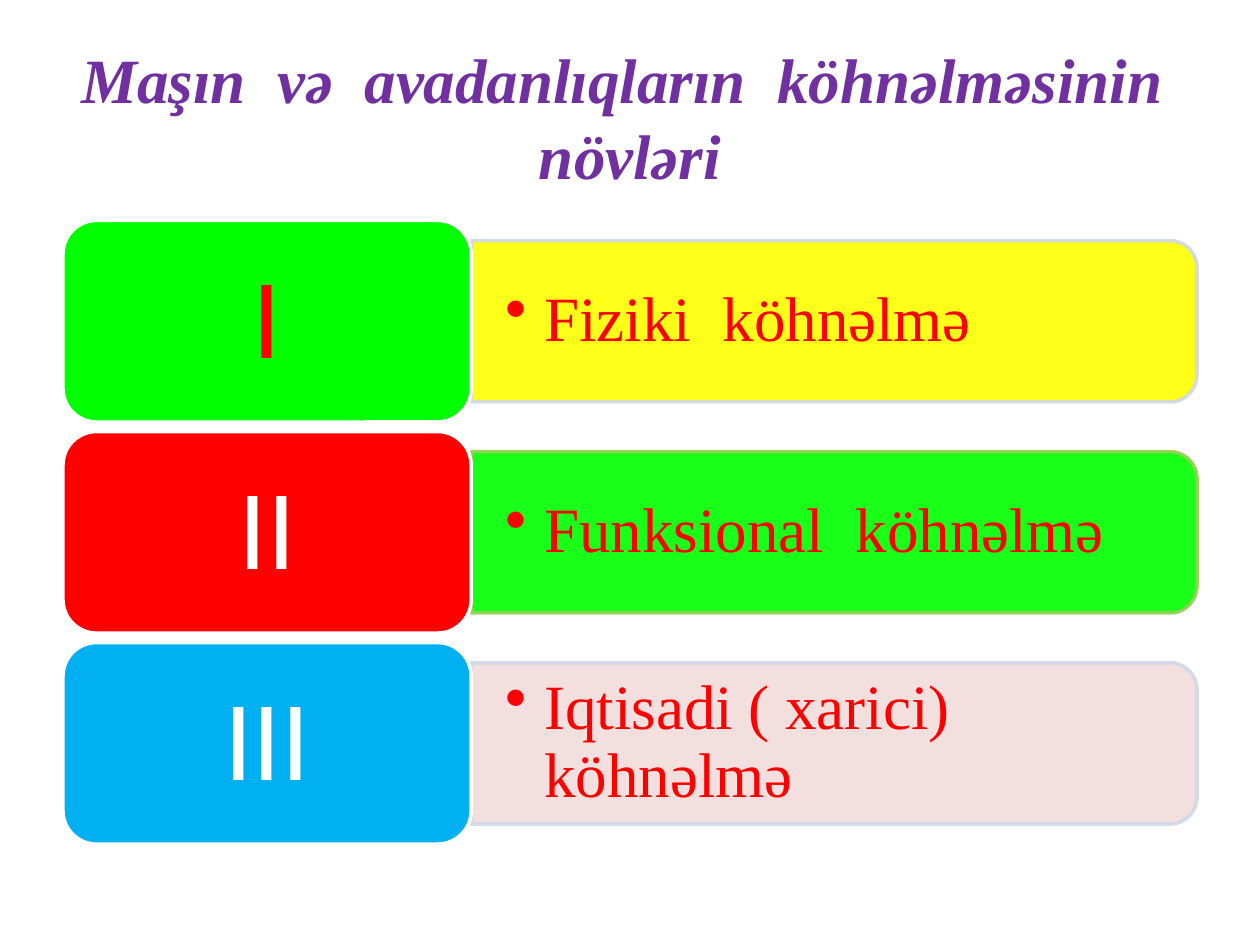
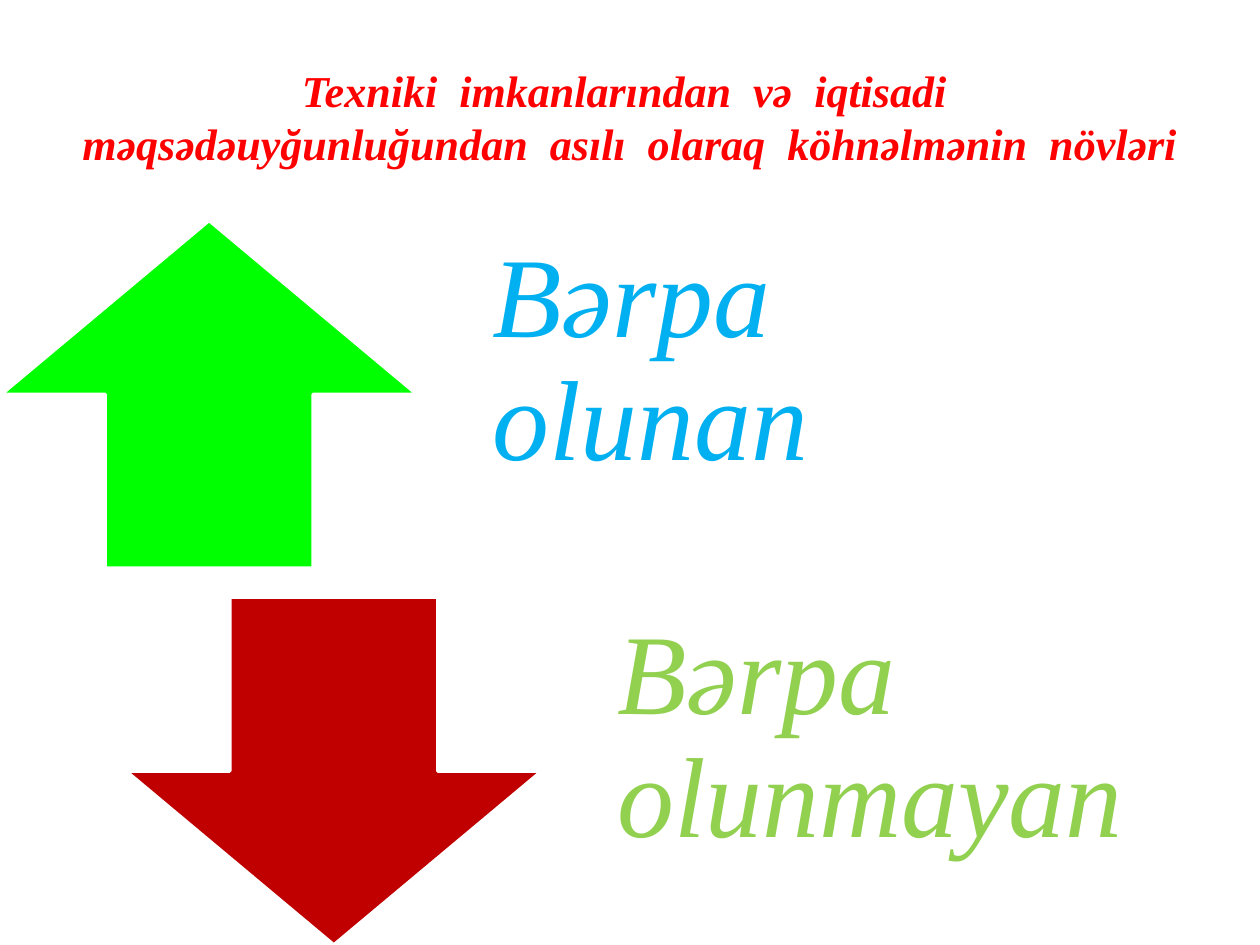
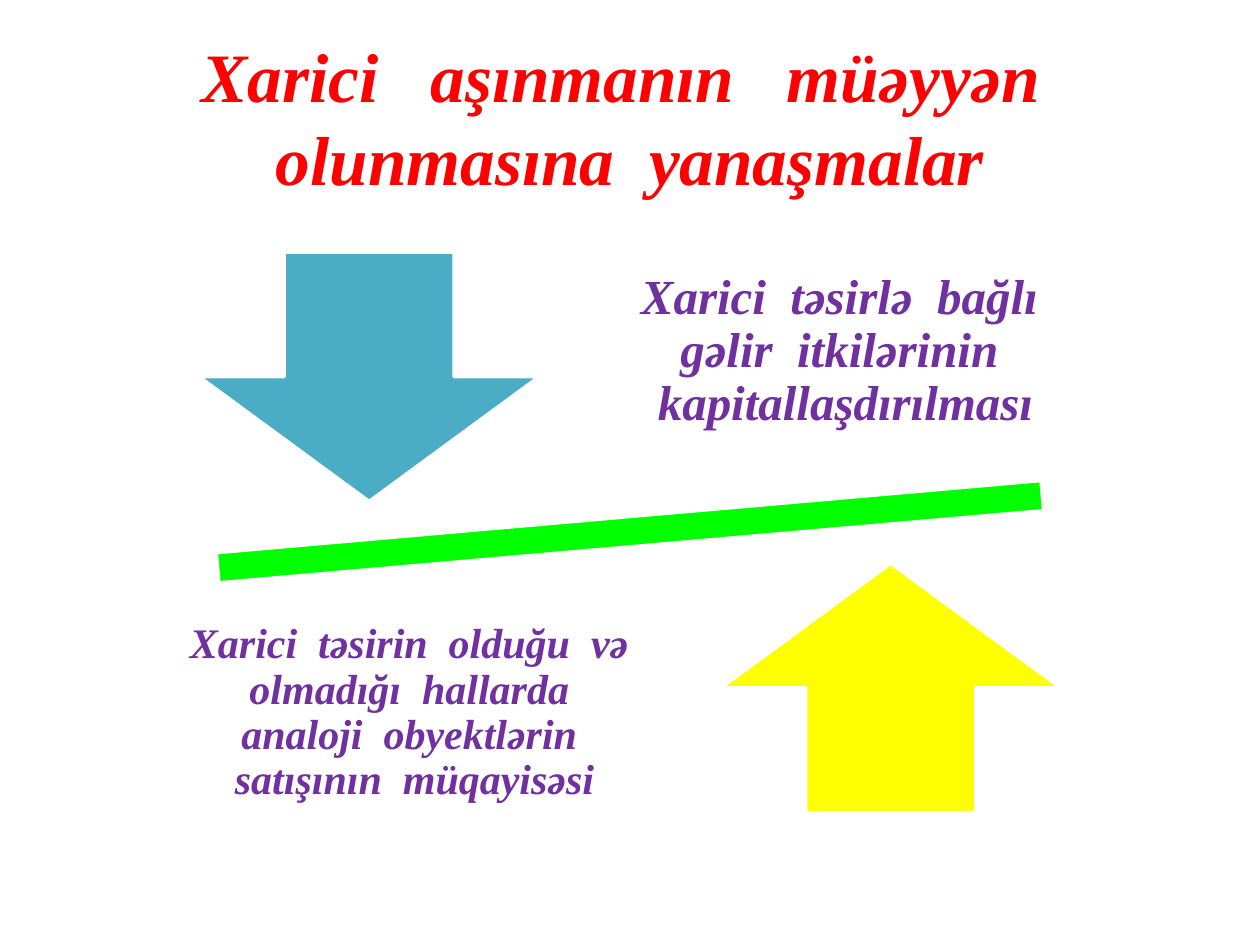
"""Builds three slides on the wear of machinery and its types."""
from lxml import etree
from pptx import Presentation
from pptx.dml.color import RGBColor
from pptx.enum.shapes import MSO_SHAPE
from pptx.enum.text import MSO_ANCHOR, PP_ALIGN
from pptx.oxml.ns import qn
from pptx.util import Inches, Pt

ROUNDED = MSO_SHAPE.ROUNDED_RECTANGLE
TAB = MSO_SHAPE.ROUND_2_SAME_RECTANGLE
UP, DOWN, MINUS = MSO_SHAPE.UP_ARROW, MSO_SHAPE.DOWN_ARROW, MSO_SHAPE.MATH_MINUS
LEFT, CENTER = PP_ALIGN.LEFT, PP_ALIGN.CENTER

SERIF, SANS = "Times New Roman", "Calibri"
WHITE, RED, GREEN, YELLOW = "FFFFFF", "FF0000", "00FF00", "FFFF00"
PURPLE, SKY, LIME, MAROON = "7030A0", "00B0F0", "92D050", "C00000"
TEAL, ROSE, PALE_BLUE = "4BACC6", "F2DCDB", "D0D8E8"

WIDTH, HEIGHT = 10, 7.5
MARGIN = WIDTH * 0.05
TITLE_BOX = (MARGIN, 0.3, WIDTH - 2 * MARGIN, 1.25)
BODY_TOP = 1.75

WEAR_TITLE = ("Maşın  və  avadanlıqların  köhnəlməsinin  növləri", 36, PURPLE)
WEAR_TYPES = [
    ("I", RED, GREEN, "Fiziki  köhnəlmə", YELLOW, PALE_BLUE),
    ("II", WHITE, RED, "Funksional  köhnəlmə", GREEN, LIME),
    ("III", WHITE, SKY, "Iqtisadi ( xarici) köhnəlmə", ROSE, PALE_BLUE),
]
REPAIR_TITLE = ("Texniki  imkanlarından  və  iqtisadi  məqsədəuyğunluğundan  asılı  olaraq  "
                "köhnəlmənin  növləri", 25.2, RED)
REPAIR_TYPES = [
    (UP, GREEN, "Bərpa  olunan", SKY),
    (DOWN, MAROON, "Bərpa  olunmayan", LIME),
]
APPROACH_TITLE = ("Xarici   aşınmanın   müəyyən  olunmasına  yanaşmalar", 39.6, RED)
APPROACHES = [
    (DOWN, TEAL, (1.58, 2), "Xarici  təsirlə  bağlı  gəlir  itkilərinin  kapitallaşdırılması",
     28, (4.8, BODY_TOP, 3.82, 2.08), 0.22),
    (UP, YELLOW, (5.72, 4.47), "Xarici  təsirin  olduğu  və  olmadığı  hallarda  analoji  "
     "obyektlərin  satışının  müqayisəsi", 24, (1.3, 4.62, 3.98, 2.08), 0.19),
]


def rgb(value):
    return RGBColor.from_string(value)


def set_opacity(shape, percent):
    for color in shape._element.spPr.iter(qn("a:srgbClr")):
        etree.SubElement(color, qn("a:alpha"), val=str(percent * 1000))


def add_figure(slide, kind, box, fill, line=WHITE, rotation=0):
    shape = slide.shapes.add_shape(kind, *map(Inches, box))
    shape.shadow.inherit = False
    shape.fill.solid()
    shape.fill.fore_color.rgb = rgb(fill)
    shape.line.color.rgb = rgb(line)
    shape.line.width = Pt(2)
    shape.rotation = rotation
    return shape


def add_text(slide, box, text, size, color, font=SERIF, bold=False, italic=False,
             align=CENTER, spacing=0.9, insets=(0.1, 0.05, 0.1, 0.05)):
    frame = slide.shapes.add_textbox(*map(Inches, box)).text_frame
    frame.word_wrap = True
    frame.vertical_anchor = MSO_ANCHOR.MIDDLE
    (frame.margin_left, frame.margin_top,
     frame.margin_right, frame.margin_bottom) = map(Inches, insets)
    paragraph = frame.paragraphs[0]
    paragraph.alignment = align
    paragraph.line_spacing = spacing
    run = paragraph.add_run()
    run.text = text
    run.font.name, run.font.size = font, Pt(size)
    run.font.bold, run.font.italic = bold, italic
    run.font.color.rgb = rgb(color)
    return paragraph


def add_bullet(paragraph, indent):
    properties = paragraph._p.get_or_add_pPr()
    properties.set("marL", str(Inches(indent)))
    properties.set("indent", str(-Inches(indent)))
    etree.SubElement(properties, qn("a:buChar"), char="•")


def add_titled_slide(presentation, title):
    slide = presentation.slides.add_slide(presentation.slide_layouts[6])
    add_text(slide, TITLE_BOX, *title, bold=True, italic=True, spacing=1.0)
    return slide


def build_wear_types(presentation):
    slide = add_titled_slide(presentation, WEAR_TITLE)
    label_width, label_height, pitch, inner = 3.24, 1.6, 1.675, 0.08
    bar_left, bar_height = MARGIN + label_width, label_height * 0.8
    bar_width = WIDTH - MARGIN - bar_left
    insets = (0.27, 0.14, 0.27, 0.14)
    for row, (numeral, numeral_color, label_fill, name, bar_fill, bar_line) in enumerate(WEAR_TYPES):
        top = BODY_TOP + row * pitch
        middle = top + label_height / 2
        bar_box = (bar_left + (bar_width - bar_height) / 2, middle - bar_width / 2,
                   bar_height, bar_width)
        set_opacity(add_figure(slide, TAB, bar_box, bar_fill, bar_line, 90), 90)
        name_box = (bar_left, middle - 0.58, bar_width - 0.06, 1.15)
        add_bullet(add_text(slide, name_box, name, 36, RED, align=LEFT, insets=insets), 0.31)
        add_figure(slide, ROUNDED, (MARGIN, top, label_width, label_height), label_fill)
        numeral_box = (MARGIN + inner, top + inner,
                       label_width - 2 * inner, label_height - 2 * inner)
        add_text(slide, numeral_box, numeral, 65, numeral_color, SANS, insets=insets)


def build_repair_types(presentation):
    slide = add_titled_slide(presentation, REPAIR_TITLE)
    arrow_width, arrow_height, text_width = 3.3, 2.76, 5.6
    step_right, step_down = 0.99, HEIGHT - arrow_height - BODY_TOP
    for row, (arrow, fill, text, color) in enumerate(REPAIR_TYPES):
        left, top = 0.01 + row * step_right, BODY_TOP + row * step_down
        add_figure(slide, arrow, (left, top, arrow_width, arrow_height), fill)
        add_text(slide, (left + arrow_width + 0.09, top, text_width, arrow_height), text, 65,
                 color, italic=True, align=LEFT, insets=(0.51, 0, 0.51, 0.51))


def build_approaches(presentation):
    slide = add_titled_slide(presentation, APPROACH_TITLE)
    add_figure(slide, MINUS, (0.53, 3.71, 8.94, 1.02), GREEN, rotation=355)
    for arrow, fill, corner, text, size, text_box, inset in APPROACHES:
        add_figure(slide, arrow, (*corner, 2.7, 1.98), fill)
        add_text(slide, text_box, text, size, PURPLE, bold=True, italic=True,
                 insets=(inset,) * 4)


def main():
    presentation = Presentation()
    presentation.slide_width, presentation.slide_height = Inches(WIDTH), Inches(HEIGHT)
    build_wear_types(presentation)
    build_repair_types(presentation)
    build_approaches(presentation)
    presentation.save("out.pptx")


if __name__ == "__main__":
    main()
